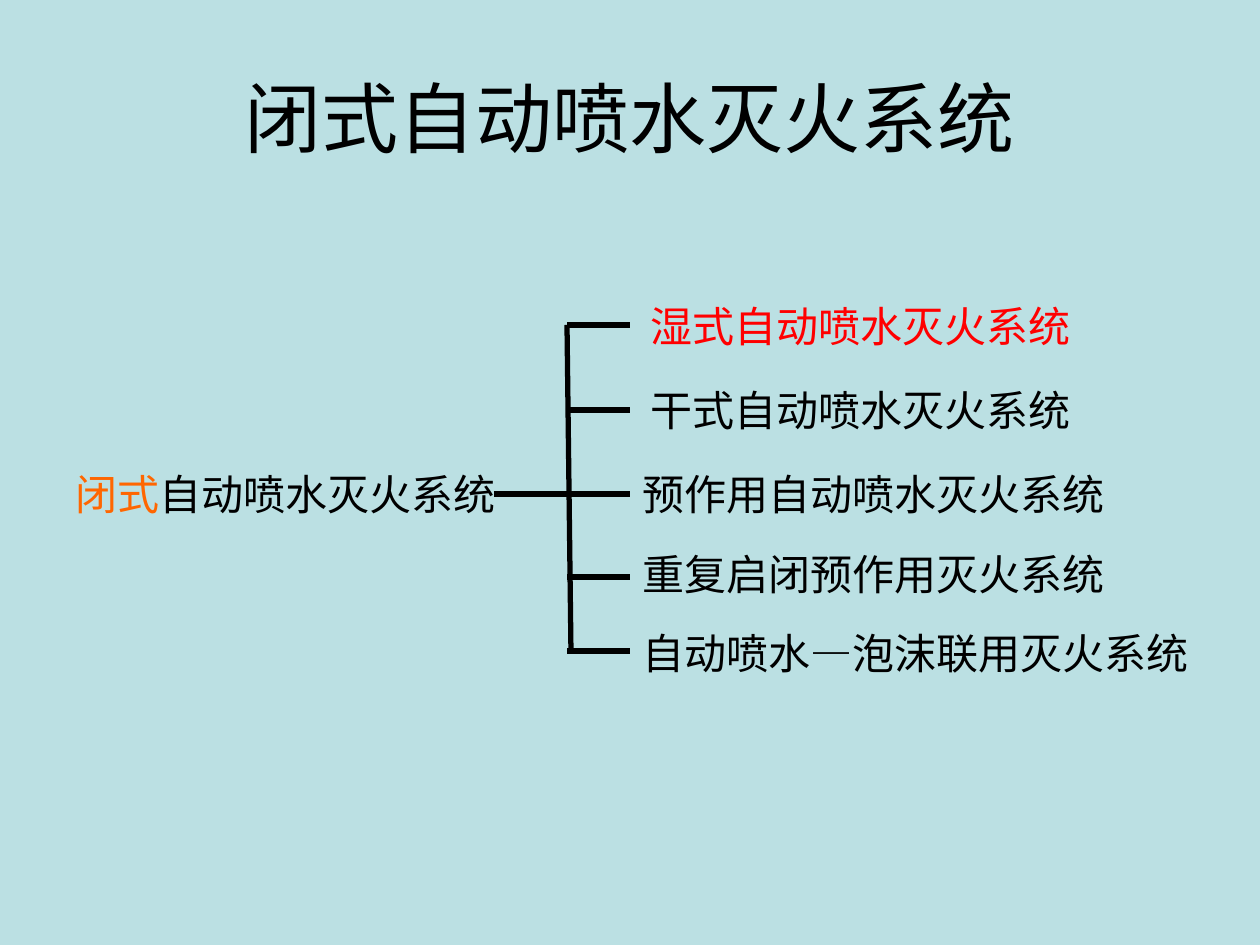
from dataclasses import dataclass

from lxml import etree
from pptx import Presentation
from pptx.dml.color import RGBColor
from pptx.enum.shapes import MSO_CONNECTOR
from pptx.enum.text import MSO_ANCHOR, MSO_AUTO_SIZE, PP_ALIGN
from pptx.oxml.ns import qn
from pptx.util import Pt

STRAIGHT = MSO_CONNECTOR.STRAIGHT
MIDDLE = MSO_ANCHOR.MIDDLE
CENTER, LEFT = PP_ALIGN.CENTER, PP_ALIGN.LEFT
GROW = MSO_AUTO_SIZE.SHAPE_TO_FIT_TEXT


@dataclass
class Theme:
    font: str = "Arial"
    back: str = "BBE0E3"
    ink: str = "000000"
    red: str = "FF0000"
    orange: str = "FF6600"
    head: int = 44
    label: int = 24
    line: int = 3


theme = Theme()

TITLE = "闭式自动喷水灭火系统"
ROOT = [("闭式", theme.orange), ("自动喷水灭火系统", theme.ink)]
LEAVES = [
    ("湿式自动喷水灭火系统", theme.red, (638, 294, 472), 325),
    ("干式自动喷水灭火系统", theme.ink, (638, 378, 472), 410),
    ("预作用自动喷水灭火系统", theme.ink, (630, 462, 504), 494),
    ("重复启闭预作用灭火系统", theme.ink, (630, 542, 525), 577),
    ("自动喷水—泡沫联用灭火系统", theme.ink, (630, 621, 577), 651),
]
WIDE, HIGH = 1260, 945
ROW = 63
STEM, TRUNK, FOOT, TIP = 494, 567, 571, 630
MID = 2


def px(n):
    return n * 914400 // 126


def add_runs(para, parts, size, align):
    para.alignment = align
    for text, color in parts:
        run = para.add_run()
        run.text = text
        run.font.name = theme.font
        run.font.size = Pt(size)
        run.font.color.rgb = RGBColor.from_string(color)


def add_label(slide, parts, place, align=LEFT):
    left, top, width = place
    box = slide.shapes.add_textbox(px(left), px(top), px(width), px(ROW))
    box.text_frame.word_wrap = True
    box.text_frame.auto_size = GROW
    add_runs(box.text_frame.paragraphs[0], parts, theme.label, align)


def add_line(slide, *ends):
    line = slide.shapes.add_connector(STRAIGHT, *map(px, ends))
    line.line.color.rgb = RGBColor.from_string(theme.ink)
    line.line.width = Pt(theme.line)
    etree.SubElement(line._element.spPr, qn("a:effectLst"))


def main():
    deck = Presentation()
    deck.slide_width, deck.slide_height = px(WIDE), px(HIGH)
    slide = deck.slides.add_slide(deck.slide_layouts[5])
    fill = slide.background.fill
    fill.solid()
    fill.fore_color.rgb = RGBColor.from_string(theme.back)

    title = slide.shapes.title
    title.left, title.top = px(63), px(38)
    title.width, title.height = px(1134), px(157)
    title.text_frame.vertical_anchor = MIDDLE
    add_runs(title.text_frame.paragraphs[0], [(TITLE, theme.ink)],
             theme.head, CENTER)

    add_label(slide, ROOT, (50, 462, 470), CENTER)
    for i, (text, color, place, y) in enumerate(LEAVES):
        add_label(slide, [(text, color)], place)
        add_line(slide, STEM if i == MID else TRUNK, y, TIP, y)
    add_line(slide, TRUNK, LEAVES[0][-1], FOOT, LEAVES[-1][-1])

    deck.save("out.pptx")


if __name__ == "__main__":
    main()
